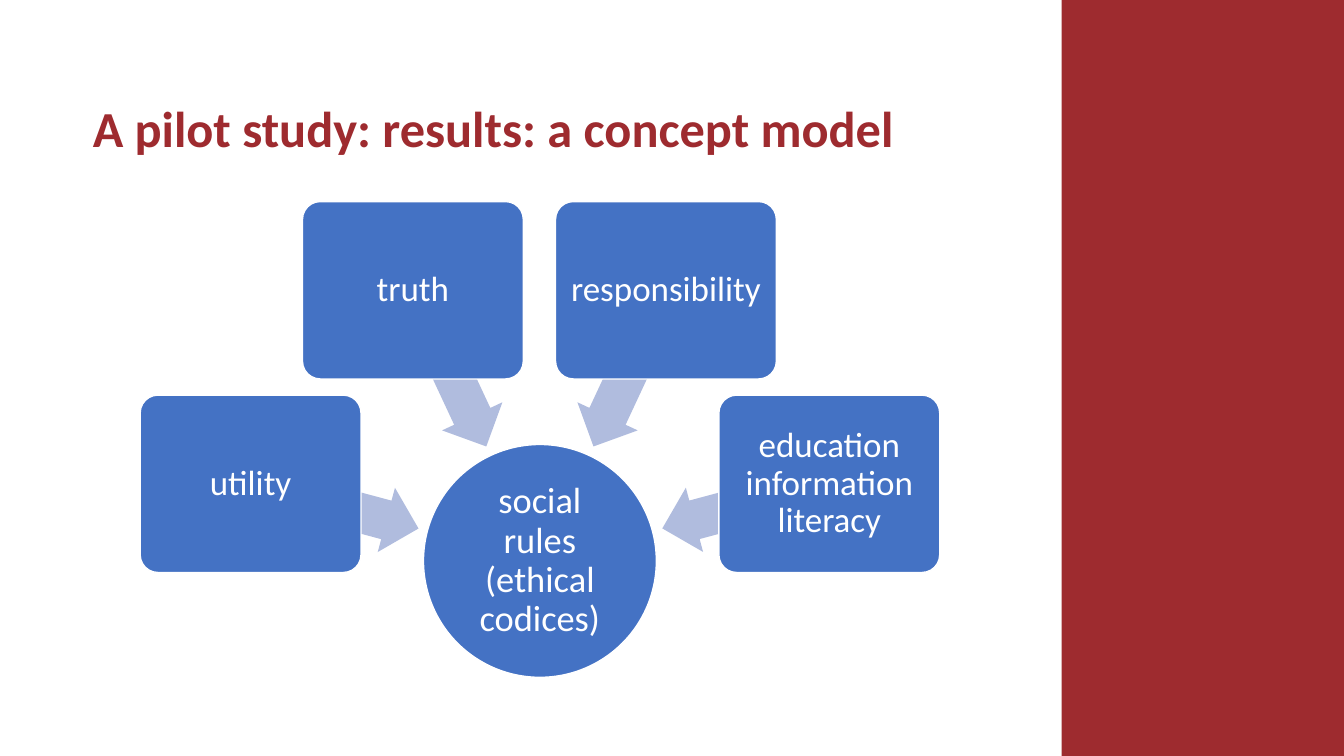
from pptx import Presentation
from pptx.dml.color import RGBColor
from pptx.enum.shapes import MSO_SHAPE
from pptx.enum.text import MSO_ANCHOR, PP_ALIGN
from pptx.util import Pt

EMU_PER_PX = 9144
WIDTH, HEIGHT = 1333, 750
RECTANGLE = MSO_SHAPE.RECTANGLE
ROUNDED = MSO_SHAPE.ROUNDED_RECTANGLE
OVAL = MSO_SHAPE.OVAL
LEFT_ARROW = MSO_SHAPE.LEFT_ARROW
MIDDLE = MSO_ANCHOR.MIDDLE
LEFT, CENTER = PP_ALIGN.LEFT, PP_ALIGN.CENTER
COLORS = {"red": "9E2B2F", "blue": "4472C4", "pale": "B0BCDE", "white": "FFFFFF"}

CONCEPTS = [
    ("utility", 139, 392, 246, 469),
    ("truth", 300, 200, 360, 332),
    ("responsibility", 551, 200, 539, 332),
    ("education information literacy", 713, 392, 654, 469),
]


def px(length):
    return length * EMU_PER_PX


def color(name):
    return RGBColor.from_string(COLORS[name])


class ConceptSlide:
    """Draws the elements of a concept model in one style on a slide."""

    def __init__(self, slide, font="Calibri"):
        self.slide = slide
        self.font = font

    def shape(self, kind, box, fill, outlined=False):
        shape = self.slide.shapes.add_shape(kind, *map(px, box))
        shape.shadow.inherit = False
        shape.fill.solid()
        shape.fill.fore_color.rgb = color(fill)
        if outlined:
            shape.line.color.rgb = color("white")
            shape.line.width = Pt(1)
        else:
            shape.line.fill.background()
        return shape

    def label(self, shape, text, size, ink, insets, align=CENTER, bold=False):
        frame = shape.text_frame
        frame.word_wrap = True
        frame.vertical_anchor = MIDDLE
        frame.margin_left, frame.margin_top, frame.margin_right, frame.margin_bottom = map(px, insets)
        paragraph = frame.paragraphs[0]
        paragraph.alignment = align
        paragraph.line_spacing = 0.9
        run = paragraph.add_run()
        run.text = text
        run.font.name = self.font
        run.font.size = Pt(size)
        run.font.bold = bold
        run.font.color.rgb = color(ink)

    def title(self, text, box):
        shape = self.slide.shapes.add_textbox(*map(px, box))
        self.label(shape, text, 36, "red", (0, 5, 10, 5), LEFT, True)

    def hub(self, text, box):
        shape = self.shape(OVAL, box, "blue", True)
        self.label(shape, text, 26, "white", (2, 2, 2, 2))

    def arrow(self, left, top, rotation):
        shape = self.shape(LEFT_ARROW, (left, top, 172, 66), "pale")
        shape.adjustments[0] = 0.6
        shape.adjustments[1] = 0.5
        shape.rotation = rotation

    def node(self, text, left, top):
        shape = self.shape(ROUNDED, (left, top, 219, 176), "blue", True)
        shape.adjustments[0] = 0.1
        self.label(shape, text, 25, "white", (5, 5, 5, 5))


def main():
    presentation = Presentation()
    presentation.slide_width = px(WIDTH)
    presentation.slide_height = px(HEIGHT)
    slide = presentation.slides.add_slide(presentation.slide_layouts[6])
    model = ConceptSlide(slide)
    model.shape(RECTANGLE, (1053, 0, WIDTH - 1053, HEIGHT), "red")
    model.title("A pilot study: results: a concept model", (92, 77, 888, 107))
    model.hub("social rules (ethical codices)", (420, 441, 231, 231))
    for index, (text, left, top, arrow_left, arrow_top) in enumerate(CONCEPTS):
        model.arrow(arrow_left, arrow_top, 195 + 50 * index)
        model.node(text, left, top)
    presentation.save("out.pptx")


if __name__ == "__main__":
    main()
